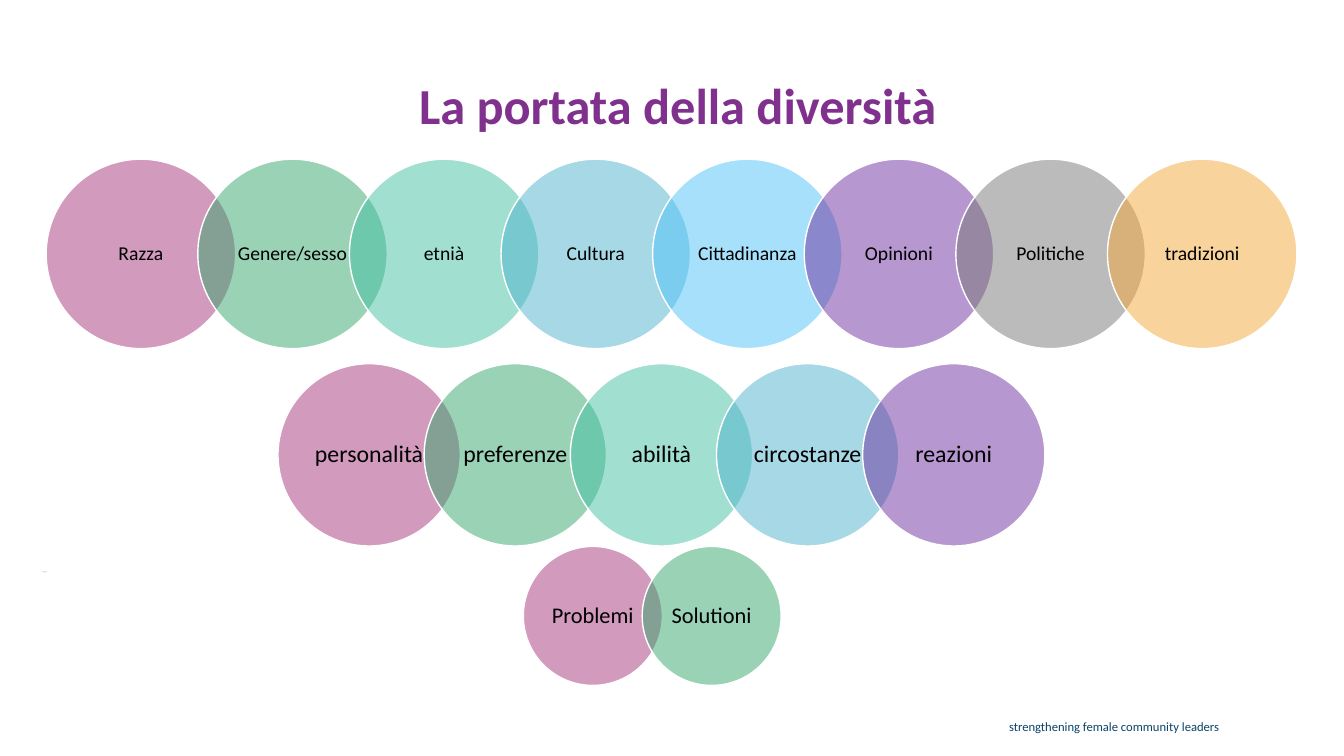
from pptx import Presentation
from pptx.dml.color import RGBColor
from pptx.enum.shapes import MSO_SHAPE
from pptx.enum.text import MSO_ANCHOR, PP_ALIGN
from pptx.oxml.ns import qn
from pptx.util import Inches, Pt
from lxml import etree

OVAL, RECTANGLE = MSO_SHAPE.OVAL, MSO_SHAPE.RECTANGLE
CENTER, RIGHT = PP_ALIGN.CENTER, PP_ALIGN.RIGHT
TOP, MIDDLE = MSO_ANCHOR.TOP, MSO_ANCHOR.MIDDLE
COLUMNS, ROWS = 32, 18

PLUM, GREEN, MINT, TEAL = "A6377D", "37A76F", "44C1A3", "4EB3CF"
SKY, VIOLET, GREY, AMBER = "51C3F9", "7030A0", "797979", "F3A839"

CHAINS = [
    (1.1, 3.79, 4.51, 3.61, 14, [
        ("Razza", PLUM), ("Genere/sesso", GREEN), ("etnià", MINT),
        ("Cultura", TEAL), ("Cittadinanza", SKY), ("Opinioni", VIOLET),
        ("Politiche", GREY), ("tradizioni", AMBER)]),
    (6.62, 8.66, 4.34, 3.48, 17, [
        ("personalità", PLUM), ("preferenze", GREEN), ("abilità", MINT),
        ("circostanze", TEAL), ("reazioni", VIOLET)]),
    (12.46, 13.01, 3.31, 2.83, 16, [
        ("Problemi", PLUM), ("Solutioni", GREEN)]),
]


def color(value):
    return RGBColor.from_string(value)


class DiversitySlide:
    font_name = "Calibri"

    def __init__(self, presentation):
        self.slide = presentation.slides.add_slide(presentation.slide_layouts[6])
        self.column = presentation.slide_width / COLUMNS
        self.row = presentation.slide_height / ROWS

    def place(self, left, top, width, height):
        return (round(left * self.column), round(top * self.row),
                round(width * self.column), round(height * self.row))

    def label(self, shape, text, size, fill, align, anchor, spacing=1.0, bold=False):
        text_frame = shape.text_frame
        text_frame.text = text
        text_frame.vertical_anchor = anchor
        paragraph = text_frame.paragraphs[0]
        paragraph.alignment = align
        paragraph.line_spacing = spacing
        font = paragraph.runs[0].font
        font.name, font.size, font.bold = self.font_name, Pt(size), bold
        font.color.rgb = color(fill)

    def text(self, box, text, size, fill, align, **style):
        shape = self.slide.shapes.add_textbox(*self.place(*box))
        shape.text_frame.word_wrap = True
        self.label(shape, text, size, fill, align, TOP, **style)

    def shape(self, kind, box, fill):
        shape = self.slide.shapes.add_shape(kind, *self.place(*box))
        shape.shadow.inherit = False
        shape.fill.solid()
        shape.fill.fore_color.rgb = color(fill)
        shape.line.fill.background()
        return shape

    def circle(self, left, top, diameter, text, size, fill):
        shape = self.shape(OVAL, (left, top, diameter, diameter), fill)
        fill_color = shape.element.spPr.find(qn("a:solidFill"))[0]
        etree.SubElement(fill_color, qn("a:alpha")).set("val", "50000")
        shape.line.color.rgb = color("FFFFFF")
        shape.line.width = Pt(1)
        text_frame = shape.text_frame
        text_frame.word_wrap = False
        text_frame.margin_top = text_frame.margin_bottom = Inches(0.02)
        self.label(shape, text, size, "000000", CENTER, MIDDLE, spacing=0.9)

    def chain(self, left, top, diameter, pitch, size, links):
        for index, (name, fill) in enumerate(links):
            self.circle(left + index * pitch, top, diameter, name, size, fill)


def main():
    presentation = Presentation()
    presentation.slide_width = Inches(13.33)
    presentation.slide_height = Inches(7.5)
    page = DiversitySlide(presentation)
    page.shape(RECTANGLE, (1.01, 13.61, 0.1, 0.01), "8CBF4B")
    page.text((3.34, 16.99, 25.92, 0.6), "strengthening female community leaders",
              9, "09446A", RIGHT)
    page.text((1.92, 1.92, 28.44, 1.51), "La portata della diversità",
              36, "80318E", CENTER, spacing=0.8, bold=True)
    for chain in CHAINS:
        page.chain(*chain)
    presentation.save("out.pptx")


if __name__ == "__main__":
    main()
